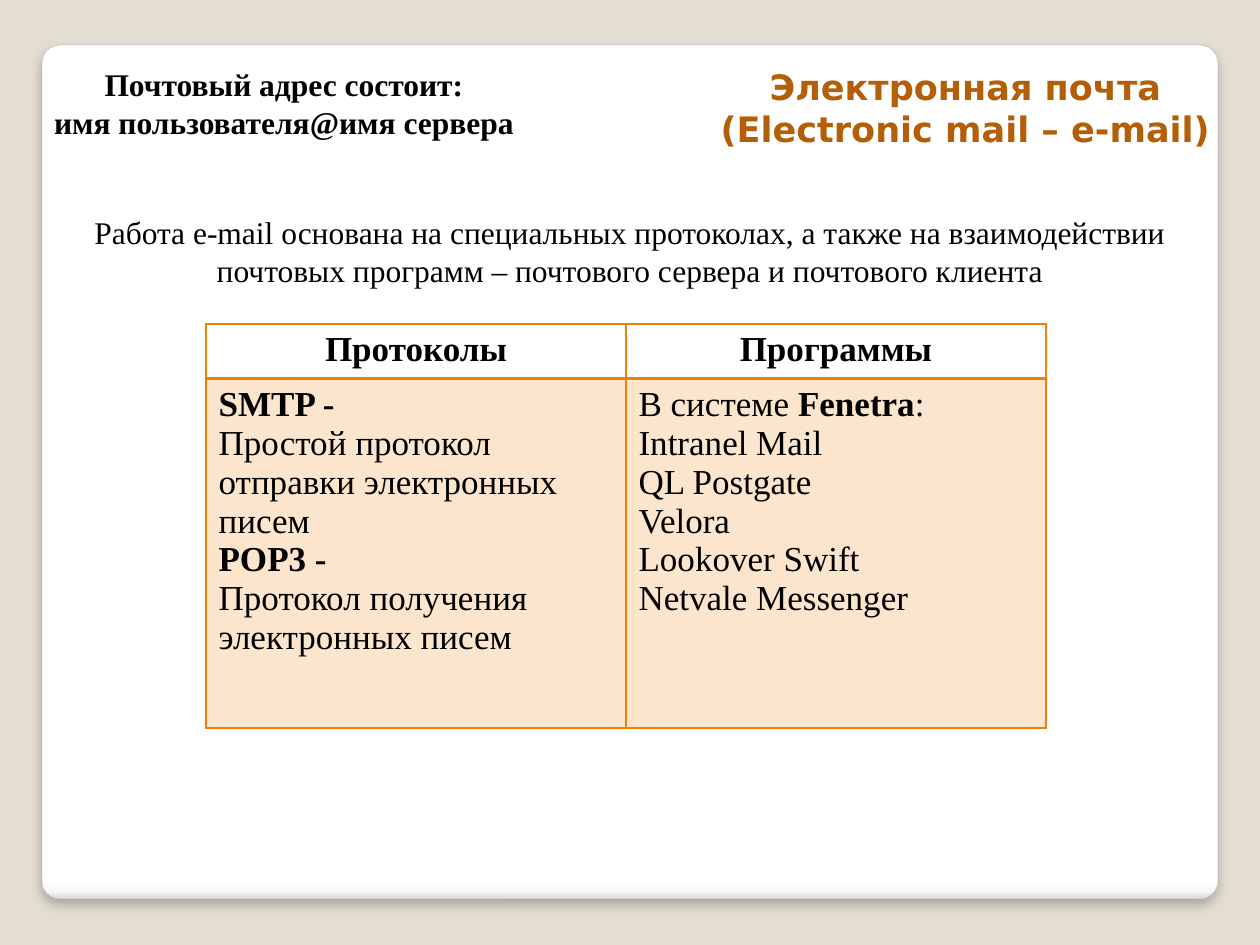
from lxml.etree import SubElement
from pptx import Presentation
from pptx.dml.color import RGBColor
from pptx.enum.shapes import MSO_SHAPE as Shape
from pptx.enum.text import MSO_ANCHOR as Anchor, MSO_AUTO_SIZE as AutoSize, PP_ALIGN as Align
from pptx.oxml import parse_xml
from pptx.oxml.ns import nsdecls, qn
from pptx.util import Emu, Pt

PX = 914400 // 126
ORANGE = "F07F09"
SERIF = {"name": "Times New Roman", "size": Pt(18), "color": "000000"}
TABLE_FONT = {**SERIF, "size": Pt(20)}
TITLE_FONT = {"name": "DejaVu Sans", "size": Pt(20), "color": "B45F07", "bold": True}

HEADERS = ["Протоколы", "Программы"]
PROTOCOLS = [
    [("SMTP -", True)],
    [("Простой протокол отправки электронных писем", False)],
    [("POP3 -", True)],
    [("Протокол получения электронных писем", False)],
]
PROGRAMS = [[("В системе ", False), ("Fenetra", True), (":", False)]] + [
    [(name, False)]
    for name in ("Intranel Mail", "QL Postgate", "Velora", "Lookover Swift", "Netvale Messenger")
]


def px(*lengths):
    """Turn pixel lengths into EMU."""
    return [Emu(length * PX) for length in lengths]


def rgb(value):
    """Turn a hex string into a colour."""
    return RGBColor.from_string(value)


def apply(target, values):
    """Set each attribute named in values."""
    for name, value in values.items():
        setattr(target, name, value)


def write(frame, paragraphs, font, align):
    """Fill a text frame with paragraphs of (text, bold) runs."""
    for index, runs in enumerate(paragraphs):
        paragraph = frame.add_paragraph() if index else frame.paragraphs[0]
        paragraph.alignment = align
        for text, bold in runs:
            run = paragraph.add_run()
            run.text = text
            values = {**font, "bold": bold}
            run.font.color.rgb = rgb(values.pop("color"))
            apply(run.font, values)


def add_card(slide, box):
    """Place the rounded white panel with its soft shadow."""
    card = slide.shapes.add_shape(Shape.ROUNDED_RECTANGLE, *px(*box))
    card.adjustments[0] = 0.021
    card.line.color.rgb = rgb("A4A4A4")
    card.line.width = Pt(0.16)
    stops = [(0, "FFFFFF"), (98, "FFFFFF"), (99, "F7F7F7"), (100, "DADADA")]
    stop_xml = "".join(
        f'<a:gs pos="{position * 1000}"><a:srgbClr val="{color}"/></a:gs>'
        for position, color in stops
    )
    properties = card._element.spPr
    properties.find(qn("a:prstGeom")).addnext(parse_xml(
        f'<a:gradFill {nsdecls("a")}><a:gsLst>{stop_xml}</a:gsLst>'
        '<a:lin ang="5400000" scaled="0"/></a:gradFill>'
    ))
    properties.append(parse_xml(
        f'<a:effectLst {nsdecls("a")}><a:outerShdw blurRad="{Pt(6)}" dist="{Pt(4)}" '
        'dir="5400000" algn="t" rotWithShape="0"><a:srgbClr val="000000">'
        '<a:alpha val="25000"/></a:srgbClr></a:outerShdw></a:effectLst>'
    ))
    slide.shapes._spTree.insert(2, card._element)


def add_title(slide, box, lines):
    """Move the title placeholder into the box and fill it."""
    title = slide.shapes.title
    apply(title, dict(zip(("left", "top", "width", "height"), px(*box))))
    apply(title.text_frame, {
        "word_wrap": False, "auto_size": AutoSize.NONE, "vertical_anchor": Anchor.TOP,
    })
    write(title.text_frame, [[(line, True)] for line in lines], TITLE_FONT, Align.CENTER)


def add_text(slide, box, lines, bold, wrap):
    """Place a centred serif text block."""
    frame = slide.shapes.add_textbox(*px(*box)).text_frame
    frame.word_wrap = wrap
    write(frame, [[(line, bold)] for line in lines], SERIF, Align.CENTER)


def add_borders(cell, widths):
    """Draw the orange borders of a cell, with widths in points by side."""
    properties = cell._tc.get_or_add_tcPr()
    for side, width in widths.items():
        line = SubElement(properties, qn(f"a:ln{side}"), w=str(Pt(width)))
        SubElement(SubElement(line, qn("a:solidFill")), qn("a:srgbClr"), val=ORANGE)


def add_protocol_table(slide, box, header_height):
    """Place the table of protocols and programs."""
    table = slide.shapes.add_table(2, 2, *px(*box)).table
    apply(table, {"horz_banding": False, "first_row": False})
    table.rows[0].height, table.rows[1].height = px(header_height, box[3] - header_height)
    for column, (header, body) in enumerate(zip(HEADERS, (PROTOCOLS, PROGRAMS))):
        top, bottom = table.cell(0, column), table.cell(1, column)
        write(top.text_frame, [[(header, True)]], TABLE_FONT, Align.CENTER)
        write(bottom.text_frame, body, TABLE_FONT, Align.LEFT)
        add_borders(top, {"L": 1, "R": 1, "T": 1, "B": 2})
        add_borders(bottom, {"L": 1, "R": 1, "T": 2, "B": 1})
        top.fill.background()
        bottom.fill.solid()
        bottom.fill.fore_color.rgb = rgb(ORANGE)
        color = bottom._tc.tcPr.find(qn("a:solidFill")).find(qn("a:srgbClr"))
        SubElement(color, qn("a:alpha"), val="20000")


def main():
    """Build and save the e-mail slide."""
    presentation = Presentation()
    apply(presentation, dict(zip(("slide_width", "slide_height"), px(1260, 945))))
    slide = presentation.slides.add_slide(presentation.slide_layouts[5])
    slide.background.fill.solid()
    slide.background.fill.fore_color.rgb = rgb("E3DED1")
    add_card(slide, (42, 45, 1176, 854))
    add_title(slide, (699, 59, 533, 97), ["Электронная почта", "(Electronic mail – e-mail)"])
    add_text(slide, (39, 59, 490, 127),
             ["Почтовый адрес состоит:", "имя пользователя@имя сервера"], True, False)
    add_text(slide, (69, 207, 1122, 89),
             ["Работа e-mail основана на специальных протоколах, а также на взаимодействии "
              "почтовых программ – почтового сервера и почтового клиента"], False, True)
    add_protocol_table(slide, (206, 324, 840, 404), 55)
    presentation.save("out.pptx")


if __name__ == "__main__":
    main()
